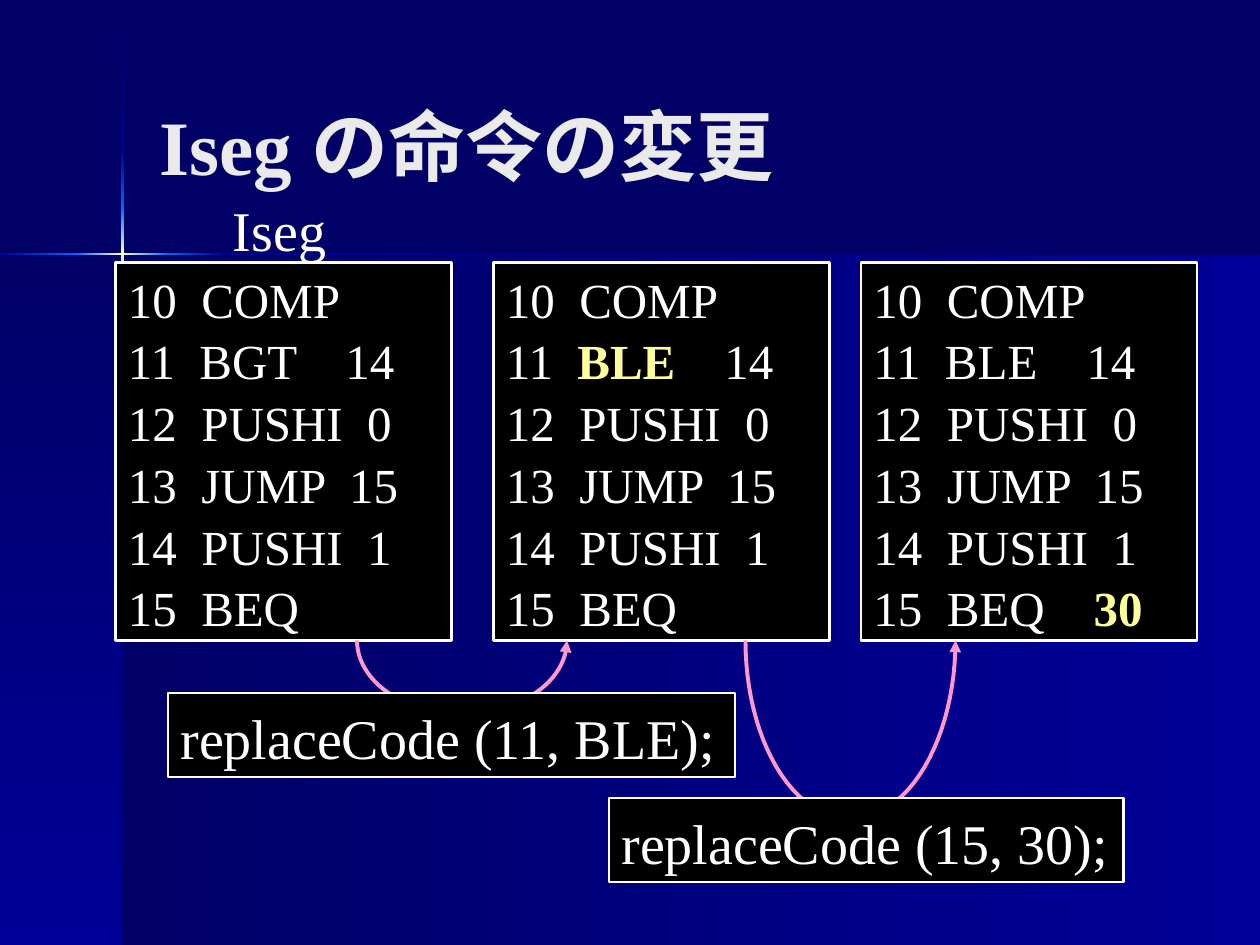
import copy
import math

import pptx
import pptx.dml.color
import pptx.enum.dml
import pptx.enum.shapes
import pptx.enum.text
import pptx.oxml
import pptx.oxml.ns
import pptx.util

RGBColor = pptx.dml.color.RGBColor
RECTANGLE = pptx.enum.shapes.MSO_SHAPE.RECTANGLE
ANCHOR = pptx.enum.text.MSO_ANCHOR
LEFT = pptx.enum.text.PP_ALIGN.LEFT

NAVY = RGBColor(0x00, 0x00, 0x66)
BLUE = RGBColor(0x00, 0x00, 0x99)
BRIGHT = RGBColor(0x00, 0x66, 0xFF)
GLOW = RGBColor(0xFF, 0xFF, 0xCC)
BLACK = RGBColor(0x00, 0x00, 0x00)
WHITE = RGBColor(0xFF, 0xFF, 0xFF)
SILVER = RGBColor(0xEA, 0xEA, 0xEA)
YELLOW = RGBColor(0xFF, 0xFF, 0x99)
PINK = RGBColor(0xFF, 0x99, 0xCC)

FONT = "Times New Roman"
COLUMNS, ROWS = 120, 90
CELL = pptx.util.Inches(10) / COLUMNS
ACROSS, DOWN = 0, 270

BASE_CODE = ["10  COMP", "11  BGT    14", "12  PUSHI  0",
             "13  JUMP  15", "14  PUSHI  1", "15  BEQ"]


def cells(*values):
    return [round(value * CELL) for value in values]


def add_gradient(slide, box, colors, angle):
    shape = slide.shapes.add_shape(RECTANGLE, *cells(*box))
    shape.shadow.inherit = False
    shape.line.fill.background()
    shape.fill.gradient()
    shape.fill.gradient_angle = angle
    stop_list = shape._element.spPr.find(".//" + pptx.oxml.ns.qn("a:gsLst"))
    for _ in colors[2:]:
        stop_list.insert(1, copy.deepcopy(stop_list[0]))
    for index, (stop, color) in enumerate(zip(shape.fill.gradient_stops, colors)):
        stop.color.rgb = color
        stop.position = index / (len(colors) - 1)


def add_backdrop(slide, box):
    left, top, width, height = box
    cross_x, cross_y, thickness = left + 11.65, top + 24.2, 0.24
    right, bottom = left + width, top + height
    add_gradient(slide, (cross_x, cross_y, right - cross_x, bottom - cross_y),
                 [NAVY, BLUE], ACROSS)
    add_gradient(slide, (left, cross_y, cross_x - left, bottom - cross_y),
                 [NAVY, BLUE], DOWN)
    flare = [BRIGHT, GLOW, BRIGHT]
    for start, end, colors in [(0, 14.5, [NAVY, BLUE]),
                               (14.5, 19.8, [BLUE, BRIGHT]),
                               (19.8, 28.5, flare),
                               (33.8, height, [BLUE, NAVY])]:
        add_gradient(slide, (cross_x - thickness / 2, top + start, thickness, end - start),
                     colors, DOWN)
    for start, end, colors in [(0, 7.25, [BLUE, BRIGHT]),
                               (7.25, 16, flare),
                               (16, 21.25, [BRIGHT, BLUE]),
                               (21.25, width, [BLUE, NAVY])]:
        add_gradient(slide, (left + start, cross_y - thickness / 2, end - start, thickness),
                     colors, ACROSS)


def format_paragraph(paragraph, size, color=WHITE, bold=False):
    paragraph.alignment = LEFT
    paragraph.font.name = FONT
    paragraph.font.size = pptx.util.Pt(size)
    paragraph.font.color.rgb = color
    paragraph.font.bold = bold


def add_title(slide, box, text):
    title = slide.shapes.title
    title.left, title.top, title.width, title.height = cells(*box)
    title.text_frame.text = text
    title.text_frame.vertical_anchor = ANCHOR.BOTTOM
    format_paragraph(title.text_frame.paragraphs[0], 44, SILVER, True)


def add_caption(slide, box, text):
    caption = slide.shapes.add_textbox(*cells(*box))
    caption.text_frame.word_wrap = False
    caption.text_frame.text = text
    format_paragraph(caption.text_frame.paragraphs[0], 32)


def add_black_box(slide, box, lines, size, highlight=None):
    shape = slide.shapes.add_shape(RECTANGLE, *cells(*box))
    shape.shadow.inherit = False
    shape.fill.solid()
    shape.fill.fore_color.rgb = BLACK
    shape.line.color.rgb = WHITE
    shape.line.width = pptx.util.Pt(1.5)
    frame = shape.text_frame
    frame.word_wrap = False
    frame.vertical_anchor = ANCHOR.MIDDLE
    for index, line in enumerate(lines):
        paragraph = frame.add_paragraph() if index else frame.paragraphs[0]
        format_paragraph(paragraph, size)
        paragraph.line_spacing = 1.05
        for part in line.partition(highlight) if highlight else [line]:
            if part:
                run = paragraph.add_run()
                run.text = part
                if part == highlight:
                    run.font.bold = True
                    run.font.color.rgb = YELLOW
    return shape


def add_quarter_arc(slide, center, radii, direction, arrow):
    steps = 24
    points = []
    for step in range(steps + 1):
        angle = math.pi / 2 * step / steps
        points.append(cells(center[0] + direction * radii[0] * math.sin(angle),
                            center[1] + radii[1] * math.cos(angle)))
    builder = slide.shapes.build_freeform(*points[0])
    builder.add_line_segments(points[1:], close=False)
    arc = builder.convert_to_shape()
    arc.shadow.inherit = False
    arc.fill.background()
    arc.line.color.rgb = PINK
    arc.line.width = pptx.util.Pt(2.25)
    if arrow:
        arc.line._get_or_add_ln().append(pptx.oxml.parse_xml(
            f'<a:tailEnd {pptx.oxml.ns.nsdecls("a")} type="triangle"/>'))


def add_replacement(slide, box, center, text):
    radii = (10, box[1] + 2 - center[1])
    add_quarter_arc(slide, center, radii, 1, True)
    add_quarter_arc(slide, center, radii, -1, False)
    add_black_box(slide, box, [text], 32)


def main():
    presentation = pptx.Presentation()
    presentation.slide_width, presentation.slide_height = cells(COLUMNS, ROWS)
    slide = presentation.slides.add_slide(presentation.slide_layouts[5])
    slide.background.fill.solid()
    slide.background.fill.fore_color.rgb = NAVY

    add_backdrop(slide, (0, 0, COLUMNS, ROWS))
    add_title(slide, (14, 0, 93, 18.8), "Iseg の命令の変更")
    add_caption(slide, (21, 18, 11.3, 7.6), "Iseg")

    branch_changed = [line.replace("BGT", "BLE") for line in BASE_CODE]
    target_added = branch_changed[:-1] + [branch_changed[-1] + "    30"]
    for left, lines, highlight in [(11, BASE_CODE, None),
                                   (47, branch_changed, "BLE"),
                                   (82, target_added, "30")]:
        add_black_box(slide, (left, 25, 32, 36), lines, 28, highlight)

    add_replacement(slide, (16, 66, 54, 8), (44, 61), "replaceCode (11, BLE);")
    add_replacement(slide, (58, 76, 49, 8), (81, 61), "replaceCode (15, 30);")
    presentation.save("out.pptx")


if __name__ == "__main__":
    main()
